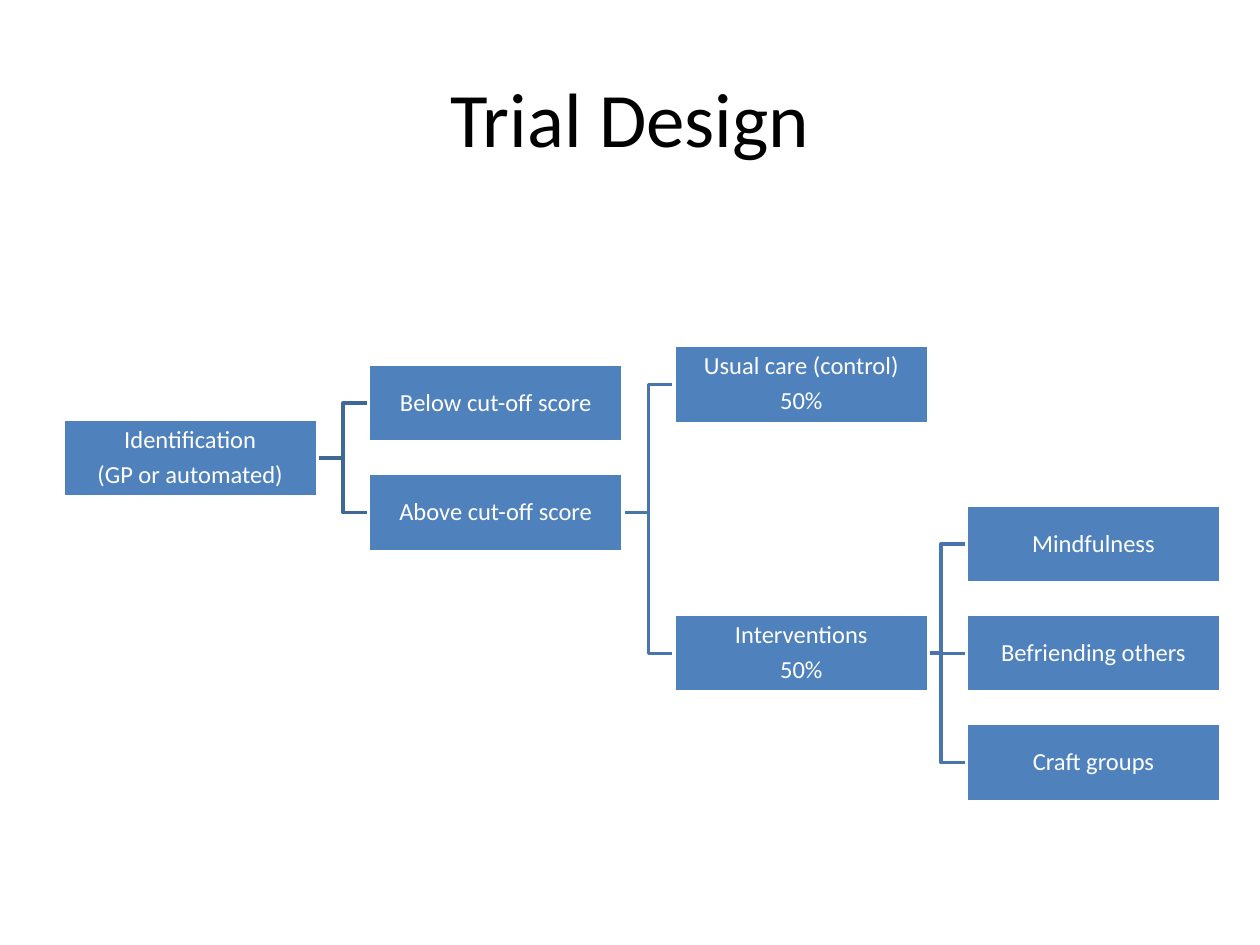
from dataclasses import dataclass

from lxml.etree import SubElement
from pptx import Presentation
from pptx.dml.color import RGBColor
from pptx.enum.shapes import MSO_CONNECTOR as Connector, MSO_SHAPE as Shape
from pptx.enum.text import MSO_ANCHOR as Anchor, PP_ALIGN as Align
from pptx.oxml.ns import qn
from pptx.util import Cm, Pt


@dataclass(frozen=True)
class Theme:
    font: str = "Calibri"
    title_size: Pt = Pt(44)
    step_size: Pt = Pt(14)
    line_width: Pt = Pt(2)
    ink: RGBColor = RGBColor.from_string("000000")
    paper: RGBColor = RGBColor.from_string("FFFFFF")
    step_fill: RGBColor = RGBColor.from_string("4F81BD")
    first_link: RGBColor = RGBColor.from_string("3F6797")
    later_link: RGBColor = RGBColor.from_string("4875AC")


theme = Theme()


def write_run(paragraph, text, size, color):
    run = paragraph.add_run()
    run.text = text
    run.font.name = theme.font
    run.font.size = size
    run.font.color.rgb = color
    paragraph.alignment = Align.CENTER


deck = Presentation()
deck.slide_width, deck.slide_height = Cm(25.4), Cm(19.05)
slide = deck.slides.add_slide(deck.slide_layouts[5])

heading = slide.shapes.title
heading.left, heading.top = Cm(1.27), Cm(0.76)
heading.width, heading.height = Cm(22.86), Cm(3.18)
heading.text_frame.vertical_anchor = Anchor.MIDDLE
write_run(heading.text_frame.paragraphs[0], "Trial Design", theme.title_size, theme.ink)

step_width, step_height = 5.13, 1.57
row_gap = 2.2
stage_lefts = [1.27, 7.43, 13.59, 19.48]
start_y, control_y, arms_y = 9.23, 7.75, 13.17

steps = {
    "identification": (0, start_y, ["Identification", "(GP or automated)"]),
    "below": (1, start_y - row_gap / 2, ["Below cut-off score"]),
    "above": (1, start_y + row_gap / 2, ["Above cut-off score"]),
    "control": (2, control_y, ["Usual care (control)", "50%"]),
    "interventions": (2, arms_y, ["Interventions", "50%"]),
    "mindfulness": (3, arms_y - row_gap, ["Mindfulness"]),
    "befriending": (3, arms_y, ["Befriending others"]),
    "crafts": (3, arms_y + row_gap, ["Craft groups"]),
}

placed = {}
for key, (stage, center_y, lines) in steps.items():
    step = slide.shapes.add_shape(
        Shape.RECTANGLE, Cm(stage_lefts[stage]), Cm(center_y - step_height / 2),
        Cm(step_width), Cm(step_height))
    step.shadow.inherit = False
    step.fill.solid()
    step.fill.fore_color.rgb = theme.step_fill
    step.line.color.rgb = theme.paper
    step.line.width = theme.line_width
    frame = step.text_frame
    frame.word_wrap = True
    frame.vertical_anchor = Anchor.MIDDLE
    frame.margin_left = frame.margin_right = Cm(0.03)
    frame.margin_top = frame.margin_bottom = Cm(0.03)
    for index, line in enumerate(lines):
        paragraph = frame.add_paragraph() if index else frame.paragraphs[0]
        paragraph.line_spacing = 0.9
        paragraph.space_after = Pt(4.9)
        write_run(paragraph, line, theme.step_size, theme.paper)
    placed[key] = step

branches = {
    "identification": (50, ["below", "above"]),
    "above": (50, ["control", "interventions"]),
    "interventions": (33, ["mindfulness", "befriending", "crafts"]),
}
right_side, left_side = 3, 1

for parent, (bend_percent, children) in branches.items():
    for child in children:
        level = steps[parent][1] == steps[child][1]
        link = slide.shapes.add_connector(
            Connector.STRAIGHT if level else Connector.ELBOW, 0, 0, 0, 0)
        link.begin_connect(placed[parent], right_side)
        link.end_connect(placed[child], left_side)
        link.line.width = theme.line_width
        link.line.color.rgb = (
            theme.first_link if parent == "identification" else theme.later_link)
        properties = link._element.spPr
        if not level:
            bends = properties.find(qn("a:prstGeom")).find(qn("a:avLst"))
            SubElement(bends, qn("a:gd"), name="adj1", fmla=f"val {bend_percent * 1000}")
        SubElement(properties, qn("a:effectLst"))
        placed["identification"]._element.addprevious(link._element)

deck.save("out.pptx")
